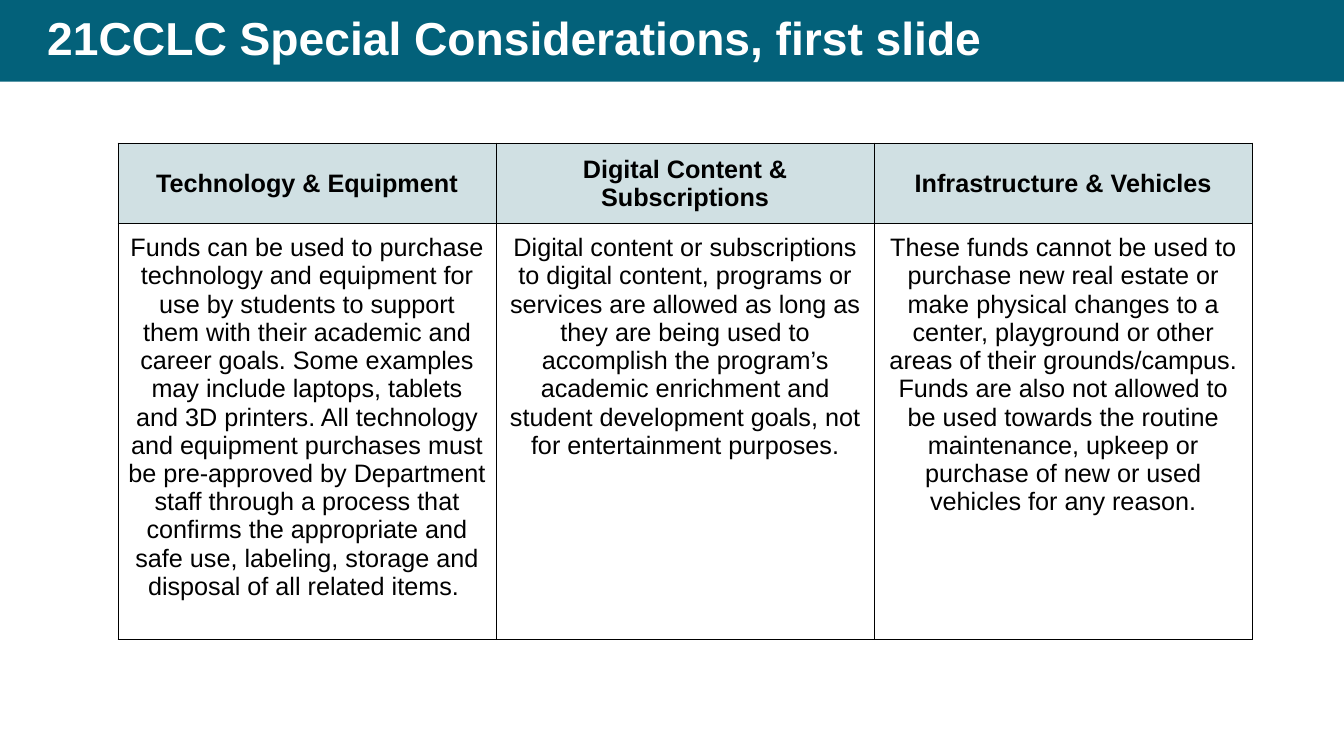
import pptx
import pptx.dml.color
import pptx.enum.shapes
import pptx.enum.text
import pptx.oxml
import pptx.oxml.ns
import pptx.util

Inches = pptx.util.Inches
Pt = pptx.util.Pt
ALIGN = pptx.enum.text.PP_ALIGN
ANCHOR = pptx.enum.text.MSO_ANCHOR


def color(value):
    return pptx.dml.color.RGBColor.from_string(value)


class Deck:
    font = "Arial"
    teal, pale, white, black = "03617A", "D0E0E3", "FFFFFF", "000000"

    def __init__(self, width, height):
        self.prs = pptx.Presentation()
        self.prs.slide_width = Inches(width)
        self.prs.slide_height = Inches(height)
        self.s = self.prs.slides.add_slide(self.prs.slide_layouts[6])

    def add_text(self, tf, text, hue, align=ALIGN.LEFT, spacing=1.0, **formats):
        p = tf.paragraphs[0]
        p.alignment, p.line_spacing = align, spacing
        r = p.add_run()
        r.text = text
        for name, value in {"name": self.font, **formats}.items():
            setattr(r.font, name, value)
        r.font.color.rgb = color(hue)

    def bar(self, x, y, w, h):
        sp = self.s.shapes.add_shape(pptx.enum.shapes.MSO_SHAPE.RECTANGLE,
                                     Inches(x), Inches(y), Inches(w), Inches(h))
        sp.shadow.inherit = False
        sp.fill.solid()
        sp.fill.fore_color.rgb = color(self.teal)
        sp.line.fill.background()

    def title(self, text, x, y, w, h):
        tf = self.s.shapes.add_textbox(Inches(x), Inches(y), Inches(w), Inches(h)).text_frame
        tf.word_wrap = True
        tf.vertical_anchor = ANCHOR.MIDDLE
        self.add_text(tf, text, self.white, spacing=0.9, size=Pt(33), bold=True)

    def borders(self, cell):
        # Border elements must precede the cell fill
        tcPr = cell._tc.get_or_add_tcPr()
        for i, side in enumerate(("lnL", "lnR", "lnT", "lnB")):
            tcPr.insert(i, pptx.oxml.parse_xml(
                f'<a:{side} {pptx.oxml.ns.nsdecls("a")} w="{Pt(0.75)}"><a:solidFill>'
                f'<a:srgbClr val="{self.black}"/></a:solidFill></a:{side}>'))

    def table(self, columns, x, y, col_width, heights):
        table = self.s.shapes.add_table(
            len(heights), len(columns), Inches(x), Inches(y),
            Inches(col_width * len(columns)), Inches(sum(heights))).table
        for row, height in zip(table.rows, heights):
            row.height = Inches(height)
        for j, texts in enumerate(columns):
            table.columns[j].width = Inches(col_width)
            for i, text in enumerate(texts):
                head = i == 0
                cell = table.cell(i, j)
                for side in ("left", "right", "top", "bottom"):
                    setattr(cell, f"margin_{side}", Inches(0.1))
                cell.vertical_anchor = ANCHOR.MIDDLE if head else ANCHOR.TOP
                if head:
                    cell.fill.solid()
                    cell.fill.fore_color.rgb = color(self.pale)
                else:
                    cell.fill.background()
                self.borders(cell)
                self.add_text(cell.text_frame, text, self.black, ALIGN.CENTER,
                              size=Pt(18), bold=head)


CONSIDERATIONS = [
    ("Technology & Equipment",
     "Funds can be used to purchase technology and equipment for use by students to "
     "support them with their academic and career goals. Some examples may include "
     "laptops, tablets and 3D printers. All technology and equipment purchases must be "
     "pre-approved by Department staff through a process that confirms the appropriate "
     "and safe use, labeling, storage and disposal of all related items. "),
    ("Digital Content & Subscriptions",
     "Digital content or subscriptions to digital content, programs or services are "
     "allowed as long as they are being used to accomplish the program’s academic "
     "enrichment and student development goals, not for entertainment purposes."),
    ("Infrastructure & Vehicles",
     "These funds cannot be used to purchase new real estate or make physical changes "
     "to a center, playground or other areas of their grounds/campus. Funds are also "
     "not allowed to be used towards the routine maintenance, upkeep or purchase of "
     "new or used vehicles for any reason."),
]


def main():
    deck = Deck(13.33, 7.5)
    # Title band
    deck.bar(0, 0, 13.33, 0.81)
    deck.title("21CCLC Special Considerations, first slide", 0.37, 0, 12.32, 0.81)
    # Considerations table
    deck.table(CONSIDERATIONS, 1.17, 1.42, 3.75, (0.76, 4.12))
    deck.prs.save("out.pptx")


if __name__ == "__main__":
    main()
